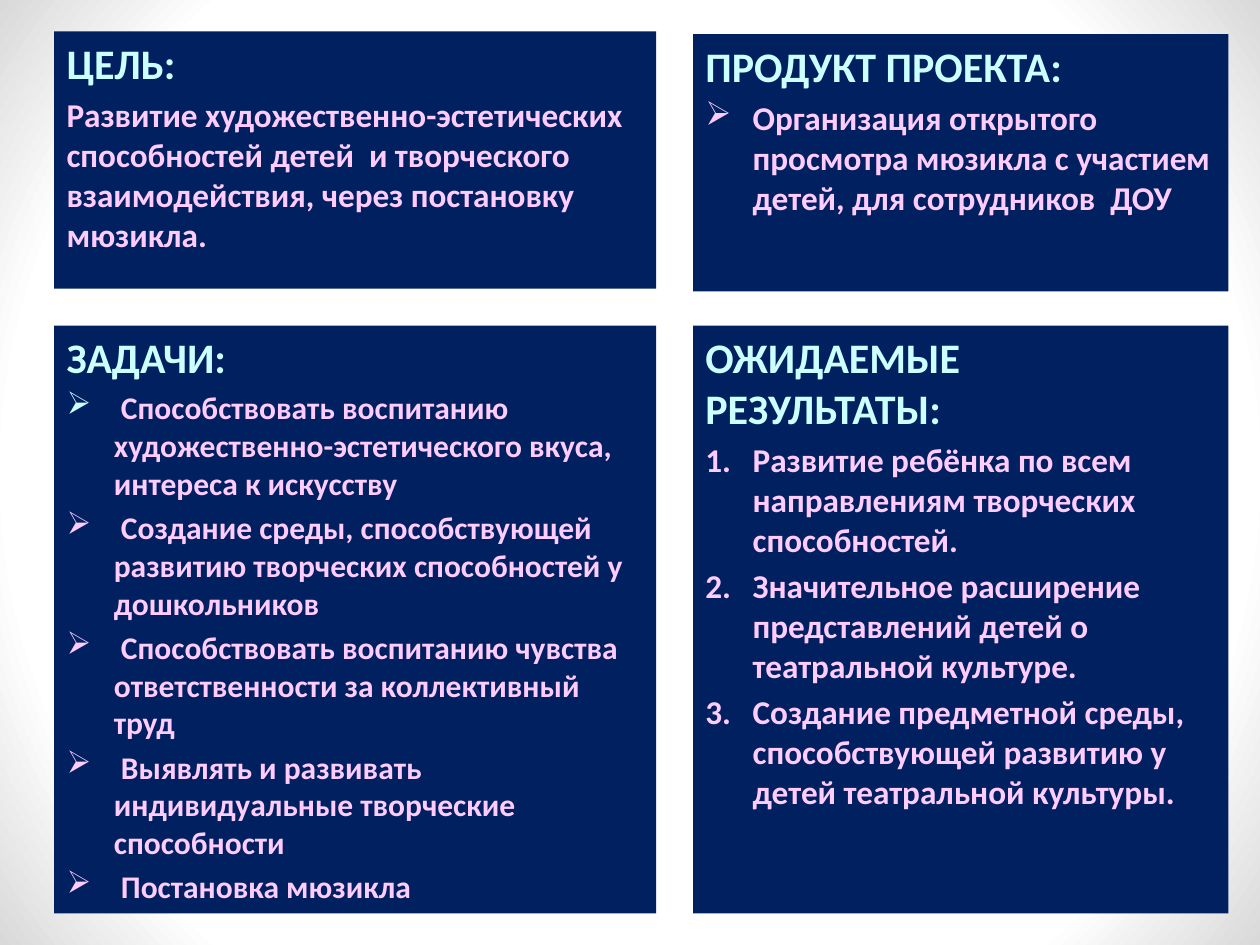
from dataclasses import dataclass
from typing import Optional

from lxml import etree
from pptx import Presentation
from pptx.dml.color import RGBColor
from pptx.enum import shapes, text
from pptx.oxml import ns
from pptx.util import Pt

NAVY = RGBColor(0x00, 0x20, 0x60)
ICE = RGBColor(0xCC, 0xFF, 0xFF)
PINK = RGBColor(0xFF, 0xCC, 0xFF)
WHITE = RGBColor(0xFF, 0xFF, 0xFF)
GREY = RGBColor(0xD9, 0xD9, 0xD9)

FONT = "Calibri"
HEADING_SIZE = 24
INDENT = 27
LEFT, RIGHT = (31, 344), (396, 306)  # column left edge and width
ARROW = ("buChar", {"char": "➢"})
NUMBER = ("buAutoNum", {"type": "arabicPeriod"})


@dataclass
class Panel:
    column: tuple[int, int]
    top: float
    height: float
    heading: str
    items: list[str]
    size: int = 19
    bullet: Optional[tuple[str, dict[str, str]]] = None
    first_bullet_color: RGBColor = PINK


PANELS = [
    Panel(LEFT, 18, 147, "ЦЕЛЬ:", [
        "Развитие художественно-эстетических способностей детей  и творческого "
        "взаимодействия, через постановку мюзикла.",
    ]),
    Panel(RIGHT, 19.5, 147, "ПРОДУКТ ПРОЕКТА:", [
        "Организация открытого просмотра мюзикла с участием детей, для сотрудников  ДОУ",
    ], bullet=ARROW),
    Panel(LEFT, 186, 336, "ЗАДАЧИ:", [
        " Способствовать воспитанию художественно-эстетического вкуса, интереса к искусству",
        " Создание среды, способствующей развитию творческих способностей у дошкольников",
        " Способствовать воспитанию чувства ответственности за коллективный труд",
        " Выявлять и развивать индивидуальные творческие способности",
        " Постановка мюзикла",
    ], size=18, bullet=ARROW, first_bullet_color=ICE),
    Panel(RIGHT, 186, 336, "ОЖИДАЕМЫЕ \vРЕЗУЛЬТАТЫ:", [
        "Развитие ребёнка по всем направлениям творческих способностей.",
        "Значительное расширение представлений детей о театральной культуре.",
        "Создание предметной среды, способствующей развитию у детей театральной культуры.",
    ], bullet=NUMBER),
]


def set_radial_background(slide) -> None:
    fill = slide.background.fill
    fill.gradient()
    for stop, color, position in zip(fill.gradient_stops, (WHITE, GREY), (0.79, 1)):
        stop.color.rgb = color
        stop.position = position
    gradient = slide.background._cSld.find(".//" + ns.qn("a:gradFill"))
    linear = gradient.find(ns.qn("a:lin"))
    radial = etree.Element(ns.qn("a:path"), path="circle")
    etree.SubElement(radial, ns.qn("a:fillToRect"), l="50000", t="50000", r="50000", b="50000")
    gradient.replace(linear, radial)


def add_bullet(paragraph, bullet: tuple[str, dict[str, str]], color: RGBColor) -> None:
    properties = paragraph._p.get_or_add_pPr()
    properties.set("marL", str(Pt(INDENT)))
    properties.set("indent", str(-Pt(INDENT)))
    bullet_color = etree.SubElement(properties, ns.qn("a:buClr"))
    etree.SubElement(bullet_color, ns.qn("a:srgbClr"), val=str(color))
    tag, attributes = bullet
    etree.SubElement(properties, ns.qn("a:" + tag), attributes)


def write_paragraph(paragraph, content: str, size: int, color: RGBColor) -> None:
    paragraph.text = content
    paragraph.alignment = text.PP_ALIGN.LEFT
    for run in paragraph.runs:
        run.font.name = FONT
        run.font.size = Pt(size)
        run.font.bold = True
        run.font.color.rgb = color


def add_panel(slide, panel: Panel) -> None:
    left, width = panel.column
    shape = slide.shapes.add_shape(
        shapes.MSO_SHAPE.RECTANGLE, Pt(left), Pt(panel.top), Pt(width), Pt(panel.height))
    shape.shadow.inherit = False
    shape.fill.solid()
    shape.fill.fore_color.rgb = NAVY
    shape.line.fill.background()
    frame = shape.text_frame
    frame.word_wrap = True
    frame.vertical_anchor = text.MSO_ANCHOR.TOP
    write_paragraph(frame.paragraphs[0], panel.heading, HEADING_SIZE, ICE)
    for index, item in enumerate(panel.items):
        paragraph = frame.add_paragraph()
        if panel.bullet:
            add_bullet(paragraph, panel.bullet, PINK if index else panel.first_bullet_color)
        paragraph.space_before = Pt(round(panel.size * 0.2, 1))
        write_paragraph(paragraph, item, panel.size, PINK)


def main() -> None:
    presentation = Presentation()
    presentation.slide_width = Pt(720)
    presentation.slide_height = Pt(540)
    slide = presentation.slides.add_slide(presentation.slide_layouts.get_by_name("Blank"))
    set_radial_background(slide)
    for panel in PANELS:
        add_panel(slide, panel)
    presentation.save("out.pptx")


if __name__ == "__main__":
    main()
